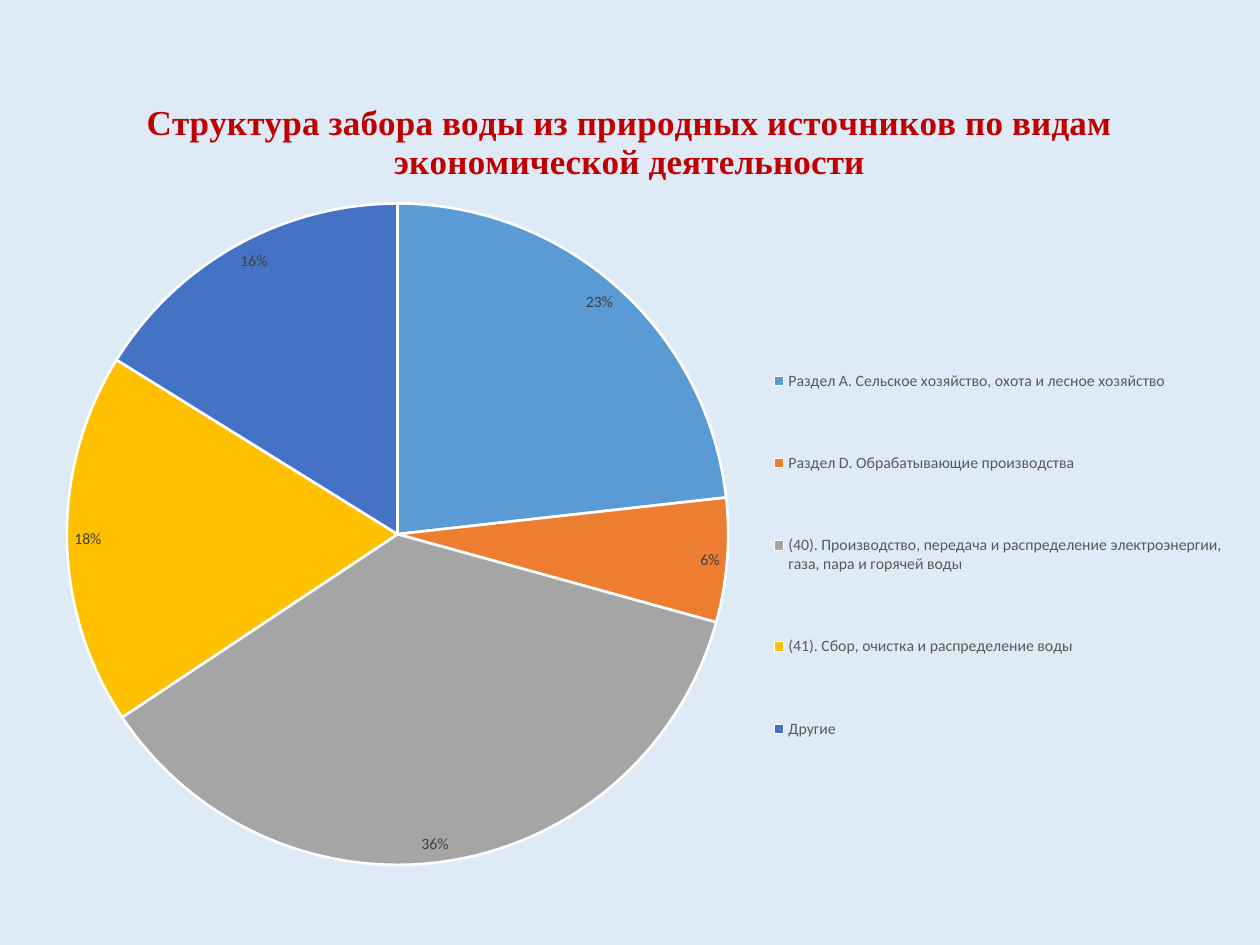
from lxml import etree
from pptx import Presentation
from pptx import util as u
from pptx.chart.data import CategoryChartData
from pptx.dml.color import RGBColor
from pptx.enum import chart as charts
from pptx.oxml.ns import qn


def paint(color_format, value):
    color_format.rgb = RGBColor.from_string(value)


def place(parent, index, mode_target=None, **fractions):
    """Give a chart part a manual layout in fractions of the chart area."""
    for old in parent.findall(qn("c:layout")):
        parent.remove(old)
    layout = etree.Element(qn("c:layout"))
    manual = etree.SubElement(layout, qn("c:manualLayout"))
    if mode_target:
        etree.SubElement(manual, qn("c:layoutTarget")).set("val", mode_target)
    for axis in "xy":
        etree.SubElement(manual, qn(f"c:{axis}Mode")).set("val", "edge")
    for name, value in fractions.items():
        etree.SubElement(manual, qn(f"c:{name}")).set("val", str(value))
    parent.insert(index, layout)


deck = Presentation()
deck.slide_width, deck.slide_height = u.Cm(25.4), u.Cm(19.05)
page = deck.slides.add_slide(deck.slide_layouts[6])
page.background.fill.solid()
paint(page.background.fill.fore_color, "DEEBF7")

# Category, share of water intake, slice colour
sectors = [
    ("Раздел А. Сельское хозяйство, охота и лесное хозяйство", 23, "5B9BD5"),
    ("Раздел D. Обрабатывающие производства", 6, "ED7D31"),
    ("(40). Производство, передача и распределение электроэнергии, "
     "газа, пара и горячей воды", 36, "A5A5A5"),
    ("(41). Сбор, очистка и распределение воды", 18, "FFC000"),
    ("Другие", 16, "4472C4"),
]
data = CategoryChartData()
data.categories = [name for name, share, color in sectors]
data.add_series("Series 1", [share for name, share, color in sectors])
chart = page.shapes.add_chart(
    charts.XL_CHART_TYPE.PIE, u.Cm(0.36), u.Cm(1.22), u.Cm(24.69), u.Cm(16.61), data
).chart
chart.font.name, chart.font.size = "Calibri", u.Pt(10)
paint(chart.font.color, "000000")

# Title
chart.has_title = True
span = chart.chart_title.text_frame.paragraphs[0].add_run()
span.text = "Структура забора воды из природных источников по видам экономической деятельности"
span.font.name, span.font.size, span.font.bold = "Times New Roman", u.Pt(20), True
paint(span.font.color, "C00000")
chart.chart_title.include_in_layout = False

# Slices
plot = chart.plots[0]
plot.vary_by_categories = True
for index, (name, share, color) in enumerate(sectors):
    slice_format = plot.series[0].points[index].format
    slice_format.fill.solid()
    paint(slice_format.fill.fore_color, color)
    paint(slice_format.line.color, "FFFFFF")
    slice_format.line.width = u.Pt(1.5)

# Percent labels
plot.has_data_labels = True
labels = plot.data_labels
labels.show_percentage, labels.show_value = True, False
labels.number_format, labels.number_format_is_linked = "0%", False
labels.position = charts.XL_LABEL_POSITION.INSIDE_END

# Legend
chart.has_legend = True
chart.legend.position = charts.XL_LEGEND_POSITION.RIGHT
chart.legend.include_in_layout = False
for font, color in ((labels.font, "404040"), (chart.legend.font, "595959")):
    font.name, font.size = "Calibri", u.Pt(9)
    paint(font.color, color)

# Positions inside the chart area
area = chart._chartSpace.chart
place(area.find(qn("c:title")), 1, x=0.1, y=0.04)
place(area.find(qn("c:plotArea")), 0, "inner", x=0.04, y=0.17, w=0.54, h=0.81)
place(area.find(qn("c:legend")), 1, x=0.61, y=0.3, w=0.38, h=0.6)

deck.save("out.pptx")
